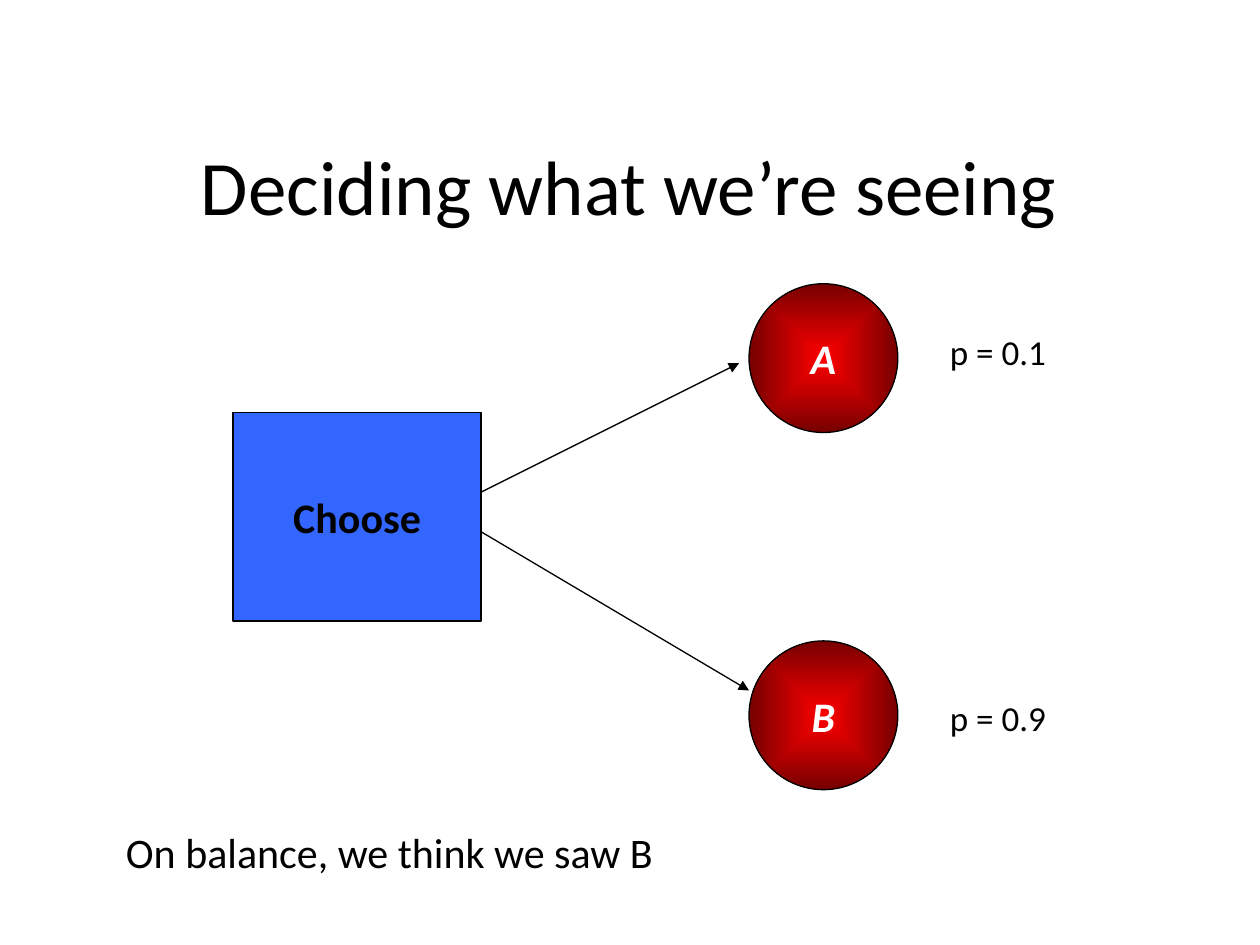
from lxml.etree import SubElement
from pptx import Presentation
from pptx.dml.color import RGBColor
from pptx.enum.shapes import MSO_CONNECTOR, MSO_SHAPE
from pptx.enum.text import MSO_ANCHOR as Anchor, PP_ALIGN as Align
from pptx.oxml.ns import qn
from pptx.util import Cm, Pt

COLORS = {"black": "000000", "white": "FFFFFF", "blue": "3366FF",
          "red": "FF0000", "dark_red": "760000"}
TITLE = "Deciding what we’re seeing"
CONCLUSION = "On balance, we think we saw B"
CHOICE = "Choose"
CHOICE_BOX = (4.7, 8.32, 5, 4.2)
OPTIONS = [
    {"name": "A", "top": 5.72, "chance": "p = 0.1", "chance_top": 6.53,
     "arrow_start": 9.92, "arrow_end": (14.9, 7.32)},
    {"name": "B", "top": 12.92, "chance": "p = 0.9", "chance_top": 13.92,
     "arrow_start": 10.72, "arrow_end": (15.1, 13.92)},
]
CIRCLE_LEFT, CIRCLE_SIZE = 15.1, 3
CHANCE_LEFT, CHANCE_WIDTH, CHANCE_HEIGHT = 18.9, 4.8, 1.1


def rgb(name):
    return RGBColor.from_string(COLORS[name])


def write(shape, text, size, color="black", bold=False, italic=False,
          align=Align.LEFT, anchor=Anchor.TOP, wrap=True):
    frame = shape.text_frame
    frame.word_wrap = wrap
    frame.vertical_anchor = anchor
    paragraph = frame.paragraphs[0]
    paragraph.alignment = align
    run = paragraph.add_run()
    run.text = text
    font = run.font
    font.name, font.size, font.bold, font.italic = "Calibri", Pt(size), bold, italic
    font.color.rgb = rgb(color)


def outline(line):
    line.color.rgb = rgb("black")
    line.width = Pt(0.75)


def add_node(slide, kind, box, text, **text_format):
    shape = slide.shapes.add_shape(kind, *map(Cm, box))
    shape.shadow.inherit = False
    outline(shape.line)
    write(shape, text, 24, bold=True, align=Align.CENTER, anchor=Anchor.MIDDLE,
          wrap=False, **text_format)
    return shape


def add_text(slide, box, text, size):
    write(slide.shapes.add_textbox(*map(Cm, box)), text, size)


def fill_from_center(shape, inner, outer):
    shape.fill.gradient()
    for stop, color, position in zip(shape.fill.gradient_stops, (inner, outer), (0, 1)):
        stop.color.rgb = rgb(color)
        stop.position = position
    gradient = shape.element.spPr.find(qn("a:gradFill"))
    gradient.remove(gradient.find(qn("a:lin")))
    shading = SubElement(gradient, qn("a:path"), {"path": "shape"})
    SubElement(shading, qn("a:fillToRect"), dict.fromkeys("ltrb", "50000"))


def add_arrow(slide, start, end):
    arrow = slide.shapes.add_connector(MSO_CONNECTOR.STRAIGHT, *map(Cm, start + end))
    outline(arrow.line)
    SubElement(arrow.line._get_or_add_ln(), qn("a:tailEnd"), {"type": "triangle"})
    SubElement(arrow.element.spPr, qn("a:effectLst"))


def main():
    presentation = Presentation()
    presentation.slide_width, presentation.slide_height = Cm(25.4), Cm(19.05)
    slide = presentation.slides.add_slide(presentation.slide_layouts[5])

    title = slide.shapes.title
    title.left, title.top, title.width, title.height = map(Cm, (0.9, 1.93, 23.57, 3.6))
    write(title, TITLE, 44, align=Align.CENTER, anchor=Anchor.MIDDLE)

    choice = add_node(slide, MSO_SHAPE.RECTANGLE, CHOICE_BOX, CHOICE)
    choice.fill.solid()
    choice.fill.fore_color.rgb = rgb("blue")
    choice_right = CHOICE_BOX[0] + CHOICE_BOX[2]

    for option in OPTIONS:
        add_arrow(slide, (choice_right, option["arrow_start"]), option["arrow_end"])
        circle = add_node(slide, MSO_SHAPE.OVAL,
                          (CIRCLE_LEFT, option["top"], CIRCLE_SIZE, CIRCLE_SIZE),
                          option["name"], color="white", italic=True)
        fill_from_center(circle, "red", "dark_red")
        add_text(slide, (CHANCE_LEFT, option["chance_top"], CHANCE_WIDTH, CHANCE_HEIGHT),
                 option["chance"], 20)

    add_text(slide, (2.29, 16.54, 20, 1.27), CONCLUSION, 24)
    presentation.save("out.pptx")


if __name__ == "__main__":
    main()
